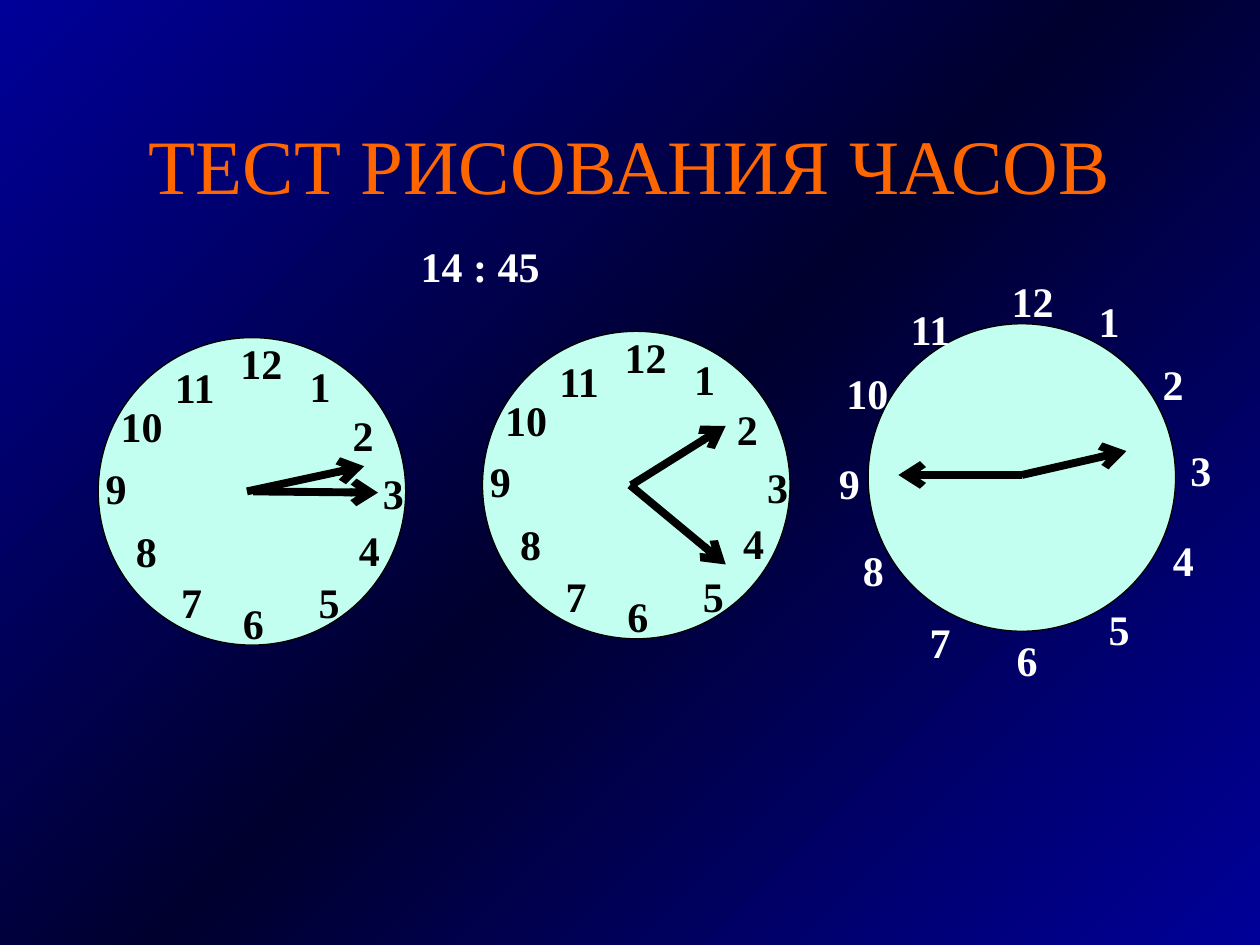
from lxml import etree
from pptx import Presentation
from pptx import util as u
from pptx.dml import color as dml
from pptx.enum import shapes, text
from pptx.oxml import ns, parse_xml

COLUMNS, ROWS = 1000, 750
CELL = u.Inches(10) // COLUMNS
FONT = "Times New Roman"
NAVY, ORANGE, MINT, BLACK, WHITE = "000099", "FF6600", "C2FFF0", "000000", "FFFFFF"
FACE_SIZE = 244
NUMERAL_HEIGHT = 50

INNER_NUMERALS = {
    12: (103, -5, 69), 1: (158, 13, 41), 2: (192, 52, 38), 3: (216, 98, 26),
    4: (197, 143, 38), 5: (165, 185, 27), 6: (105, 201, 41), 7: (56, 185, 57),
    8: (20, 144, 52), 9: (-4, 94, 39), 10: (8, 45, 68), 11: (51, 14, 71),
}
OUTER_NUMERALS = {
    12: (104, -43, 69), 1: (173, -27, 31), 2: (224, 23, 44), 3: (246, 91, 26),
    4: (232, 162, 28), 5: (181, 217, 39), 6: (108, 242, 41), 7: (39, 227, 33),
    8: (-14, 170, 39), 9: (-33, 101, 39), 10: (-27, 30, 80), 11: (24, -21, 64),
}
CLOCKS = [
    dict(box=(689, 257), numerals=OUTER_NUMERALS, ink=WHITE,
         hands=[(122, 120, 24, 120), (122, 120, 205, 101)]),
    dict(box=(383, 263), numerals=INNER_NUMERALS, ink=BLACK,
         hands=[(118, 122, 193, 75), (117, 122, 193, 185)]),
    dict(box=(78, 268), numerals=INNER_NUMERALS, ink=BLACK,
         hands=[(118, 122, 211, 102), (123, 122, 222, 123)]),
]


def rgb(value):
    return dml.RGBColor.from_string(value)


def grid(*cells):
    return [u.Emu(cell * CELL) for cell in cells]


def assign(target, values):
    for name, value in values.items():
        setattr(target, name, value)


def add_background(page):
    blue = f'<a:srgbClr val="{NAVY}"/>'
    dark = (f'<a:srgbClr val="{NAVY}"><a:gamma/><a:shade val="30196"/>'
            '<a:invGamma/></a:srgbClr>')
    stops = "".join(f'<a:gs pos="{place}">{colour}</a:gs>'
                    for place, colour in ((0, blue), (50000, dark), (100000, blue)))
    page.background.fill.solid()
    properties = page.element.find(".//" + ns.qn("p:bgPr"))
    properties.replace(properties[0], parse_xml(
        f'<a:gradFill {ns.nsdecls("a")} rotWithShape="0"><a:gsLst>{stops}</a:gsLst>'
        '<a:lin ang="2700000" scaled="1"/></a:gradFill>'))


def add_text(page, box, words, frame_format, font_format, ink,
             alignment=text.PP_ALIGN.LEFT):
    frame = page.shapes.add_textbox(*grid(*box)).text_frame
    assign(frame, {"word_wrap": True, **frame_format})
    para = frame.paragraphs[0]
    para.alignment = alignment
    span = para.add_run()
    span.text = words
    assign(span.font, {"name": FONT, **font_format})
    span.font.color.rgb = rgb(ink)


def add_title(page, box):
    add_text(page, box, "ТЕСТ РИСОВАНИЯ ЧАСОВ",
             {"vertical_anchor": text.MSO_ANCHOR.MIDDLE},
             {"size": u.Pt(44)}, ORANGE, text.PP_ALIGN.CENTER)


def add_label(page, box, words, ink):
    add_text(page, box, words,
             {"auto_size": text.MSO_AUTO_SIZE.SHAPE_TO_FIT_TEXT},
             {"size": u.Pt(24), "bold": True}, ink)


def add_face(page, box):
    face = page.shapes.add_shape(shapes.MSO_SHAPE.OVAL, *grid(*box))
    face.shadow.inherit = False
    face.fill.solid()
    face.fill.fore_color.rgb = rgb(MINT)
    face.line.color.rgb = rgb(BLACK)
    face.line.width = u.Pt(0.75)


def add_hand(page, ends):
    hand = page.shapes.add_connector(shapes.MSO_CONNECTOR.STRAIGHT, *grid(*ends))
    hand.line.color.rgb = rgb(BLACK)
    hand.line.width = u.Pt(4.5)
    properties = hand.element.spPr
    outline = properties.find(ns.qn("a:ln"))
    etree.SubElement(outline, ns.qn("a:tailEnd"), type="arrow")
    etree.SubElement(properties, ns.qn("a:effectLst"))


def add_clock(page, box, numerals, ink, hands):
    left, top = box
    add_face(page, (left, top, FACE_SIZE, FACE_SIZE))
    for x1, y1, x2, y2 in hands:
        add_hand(page, (left + x1, top + y1, left + x2, top + y2))
    for hour, (x, y, width) in numerals.items():
        add_label(page, (left + x, top + y, width, NUMERAL_HEIGHT), str(hour), ink)


def main():
    deck = Presentation()
    assign(deck, {"slide_width": COLUMNS * CELL, "slide_height": ROWS * CELL})
    page = deck.slides.add_slide(deck.slide_layouts[6])
    add_background(page)
    add_title(page, (75, 67, 850, 125))
    add_label(page, (324, 186, 195, NUMERAL_HEIGHT), "14 : 45", WHITE)
    for clock in CLOCKS:
        add_clock(page, **clock)
    deck.save("out.pptx")


if __name__ == "__main__":
    main()
